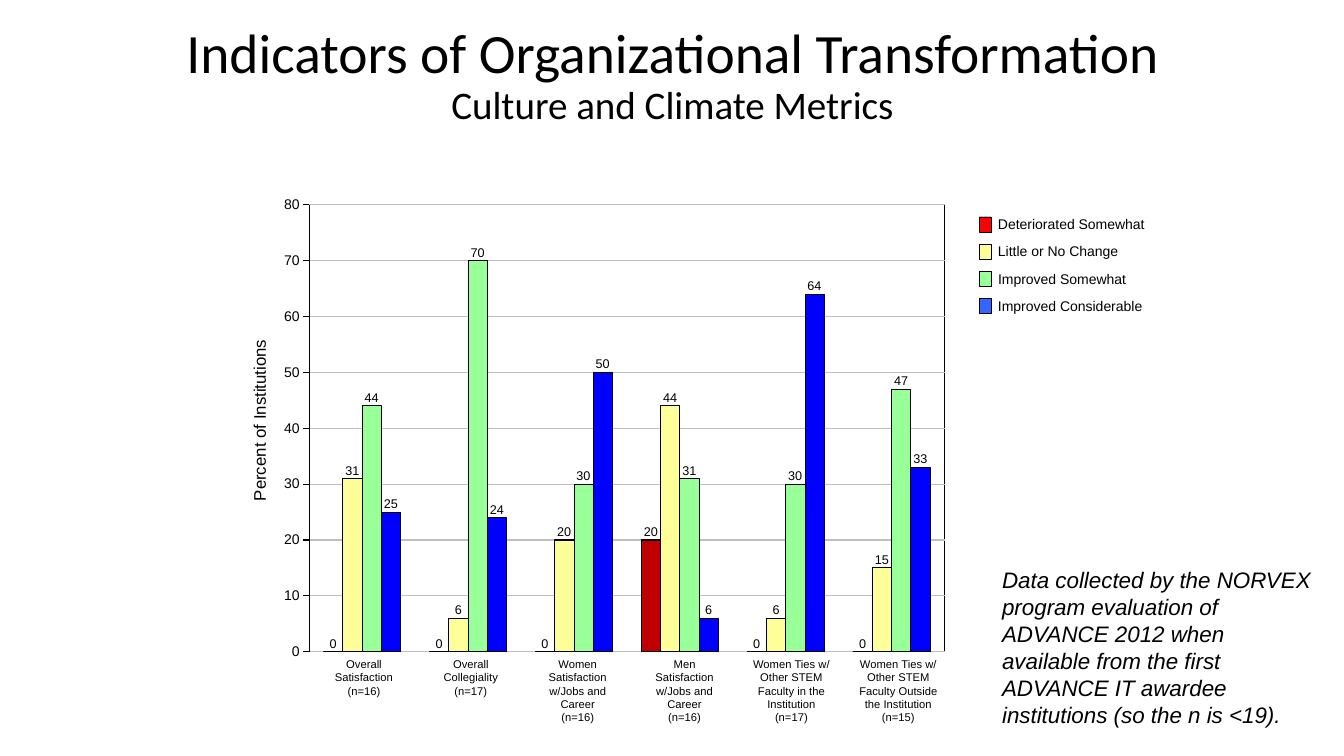
from pptx import Presentation
from pptx.chart.data import CategoryChartData
from pptx.dml.color import RGBColor
from pptx.enum.chart import XL_CHART_TYPE, XL_TICK_MARK
from pptx.enum.shapes import MSO_SHAPE
from pptx.enum.text import MSO_ANCHOR, MSO_AUTO_SIZE, PP_ALIGN
from pptx.oxml import parse_xml
from pptx.oxml.ns import nsdecls
from pptx.util import Pt

COLUMNS = XL_CHART_TYPE.COLUMN_CLUSTERED
TICK_OUT = XL_TICK_MARK.OUTSIDE
TICK_NONE = XL_TICK_MARK.NONE
RECT = MSO_SHAPE.RECTANGLE
MIDDLE = MSO_ANCHOR.MIDDLE
GROW = MSO_AUTO_SIZE.SHAPE_TO_FIT_TEXT
NO_FIT = MSO_AUTO_SIZE.NONE
LEFT, CENTER = PP_ALIGN.LEFT, PP_ALIGN.CENTER

PX = 9144
COLORS = {
    "text": "000000", "grid": "BFBFBF", "red": "FF0000", "dark_red": "C00000",
    "yellow": "FFFF99", "green": "99FF99", "blue": "0000FF", "light_blue": "3366FF",
}
SERIES = [
    ("Series 1", "dark_red", [0, 0, 0, 20, 0, 0]),
    ("Series 2", "yellow", [31, 6, 20, 44, 6, 15]),
    ("Series 3", "green", [44, 70, 30, 31, 30, 47]),
    ("Series 4", "blue", [25, 24, 50, 6, 64, 33]),
]
CATEGORIES = [
    ("Overall\nSatisfaction\n(n=16)", 79, False),
    ("Overall\nCollegiality\n(n=17)", 75, False),
    ("Women Satisfaction w/Jobs and Career\n(n=16)", 99, True),
    ("Men Satisfaction w/Jobs and Career\n(n=16)", 83, True),
    ("Women Ties w/ Other STEM Faculty in the Institution\n(n=17)", 100, True),
    ("Women Ties w/ Other STEM Faculty Outside the Institution\n(n=15)", 101, True),
]
LEGEND = [
    ("Deteriorated Somewhat", "red", 167),
    ("Little or No Change", "yellow", 140),
    ("Improved Somewhat", "green", 148),
    ("Improved Considerable", "light_blue", 164),
]
NOTE = ("Data collected by the NORVEX program evaluation of ADVANCE 2012 when available "
        "from the first ADVANCE IT awardee institutions (so the n is <19).")
PLOT = (0.059, 0.042, 0.935, 0.916)
AXIS_MAX = 80
GAP = 1.5


def emu(*lengths):
    return [round(n * PX) for n in lengths]


def rgb(name):
    return RGBColor.from_string(COLORS[name])


def set_font(font, size, name="Arial"):
    font.size = Pt(size)
    font.name = name
    font.color.rgb = rgb("text")


def set_line(line, color, width):
    line.color.rgb = rgb(color)
    line.width = Pt(width)


def add_text(s, box, text, size, align=LEFT, wrap=False, italic=False):
    sp = s.shapes.add_textbox(*emu(*box))
    tf = sp.text_frame
    tf.word_wrap = wrap
    tf.auto_size = GROW
    tf.text = text
    for p in tf.paragraphs:
        p.alignment = align
        for r in p.runs:
            set_font(r.font, size)
            if italic:
                r.font.italic = True
    return sp


def add_title(s, box):
    sp = s.shapes.title
    sp.left, sp.top, sp.width, sp.height = emu(*box)
    tf = sp.text_frame
    tf.text = "Indicators of Organizational Transformation\vCulture and Climate Metrics"
    tf.word_wrap = True
    tf.auto_size = NO_FIT
    tf.vertical_anchor = MIDDLE
    p = tf.paragraphs[0]
    p.alignment = CENTER
    p.line_spacing = 0.9
    for r, size in zip(p.runs, (39.6, 27.9)):
        set_font(r.font, size, "Calibri")


def set_plot_area(chart):
    area = chart.element.xpath("c:chart/c:plotArea")[0]
    for old in area.xpath("c:layout"):
        area.remove(old)
    sizes = "".join(f'<c:{k} val="{v}"/>' for k, v in zip("xywh", PLOT))
    area.insert(0, parse_xml(
        f'<c:layout {nsdecls("c")}><c:manualLayout><c:layoutTarget val="inner"/>'
        f'<c:xMode val="edge"/><c:yMode val="edge"/>{sizes}</c:manualLayout></c:layout>'))
    area.append(parse_xml(
        f'<c:spPr {nsdecls("c", "a")}><a:noFill/><a:ln w="9525"><a:solidFill>'
        f'<a:srgbClr val="{COLORS["text"]}"/></a:solidFill></a:ln></c:spPr>'))


def add_columns(s, box):
    data = CategoryChartData()
    data.categories = [str(i + 1) for i in range(len(CATEGORIES))]
    for name, _, values in SERIES:
        data.add_series(name, values)
    chart = s.shapes.add_chart(COLUMNS, *emu(*box), data).chart
    chart.has_legend = False
    chart.has_title = False
    set_font(chart.font, 10)
    chart.category_axis.visible = False
    axis = chart.value_axis
    axis.minimum_scale, axis.maximum_scale, axis.major_unit = 0, AXIS_MAX, 10
    axis.major_tick_mark, axis.minor_tick_mark = TICK_OUT, TICK_NONE
    set_font(axis.tick_labels.font, 10)
    set_line(axis.format.line, "text", 0.75)
    axis.has_major_gridlines = True
    set_line(axis.major_gridlines.format.line, "grid", 0.75)
    plot = chart.plots[0]
    plot.vary_by_categories = False
    plot.gap_width = round(GAP * 100)
    plot.overlap = 0
    for series, (_, color, _) in zip(plot.series, SERIES):
        series.invert_if_negative = False
        series.format.fill.solid()
        series.format.fill.fore_color.rgb = rgb(color)
        set_line(series.format.line, "text", 0.75)
    set_plot_area(chart)


def add_value_labels(s, box):
    x, y, w, h = box
    left, top = x + PLOT[0] * w, y + PLOT[1] * h
    width, height = PLOT[2] * w, PLOT[3] * h
    slot = width / len(CATEGORIES)
    bar = slot / (len(SERIES) + GAP)
    for j, (_, _, values) in enumerate(SERIES):
        for i, value in enumerate(values):
            center = left + slot * i + bar * (GAP / 2 + j + 0.5)
            bar_top = top + height * (1 - value / AXIS_MAX)
            label_w = 34 if value > 9 else 27
            add_text(s, (center - label_w / 2, bar_top - 21, label_w, 25), str(value), 9)


def add_category_labels(s, box):
    x, y, _, h = box
    for i, (text, width, wrap) in enumerate(CATEGORIES):
        center = x + 94 + 106 * i
        add_text(s, (center - width / 2, y + h - 20, width, 77), text, 8, CENTER, wrap)


def add_chart_region(s, box):
    add_columns(s, box)
    add_category_labels(s, box)
    add_value_labels(s, box)
    x, y, _, _ = box
    add_text(s, (x - 101, y + 218, 182, 30), "Percent of Institutions", 12).rotation = 270


def add_legend(s, box):
    x, y, swatch_w, swatch_h = box
    for i, (text, color, width) in enumerate(LEGEND):
        top = y + 27 * i
        sp = s.shapes.add_shape(RECT, *emu(x, top, swatch_w, swatch_h))
        sp.shadow.inherit = False
        sp.fill.solid()
        sp.fill.fore_color.rgb = rgb(color)
        set_line(sp.line, "text", 0.25)
        add_text(s, (x + 9, top - 6, width, 27), text, 10)


def main():
    prs = Presentation()
    prs.slide_width, prs.slide_height = emu(1333, 750)
    s = prs.slides.add_slide(prs.slide_layouts[5])
    add_title(s, (167, 8, 1000, 137))
    add_chart_region(s, (267, 183, 674, 484))
    add_legend(s, (971, 215, 12, 15))
    add_text(s, (984, 557, 329, 172), NOTE, 16, wrap=True, italic=True)
    prs.save("out.pptx")


if __name__ == "__main__":
    main()
